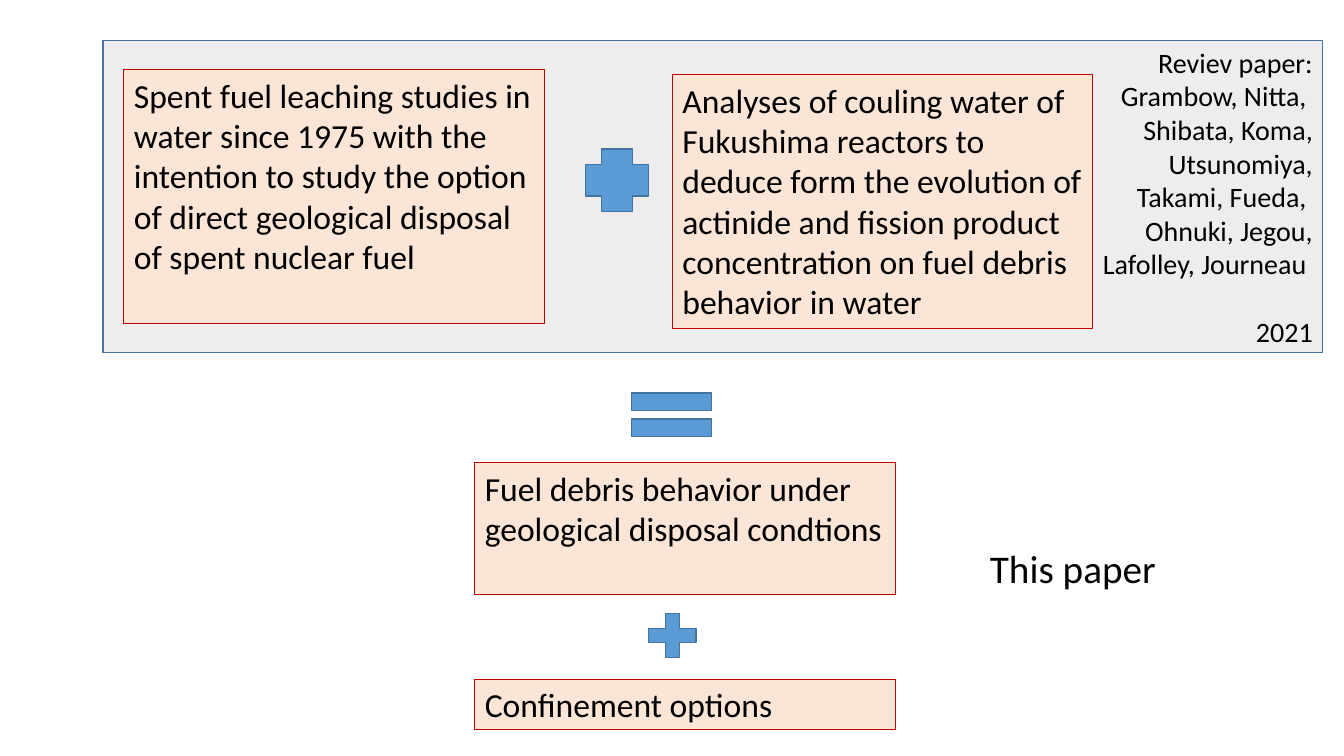
from pptx import Presentation
from pptx.dml.color import RGBColor
from pptx.enum import shapes, text
from pptx import util as u

PX = 9144
FONT = "Calibri"
HUES = {
    "panel": "EDEDED",
    "card": "FBE5D6",
    "red": "C00000",
    "sign": "5B9BD5",
    "edge": "43739E",
    "ink": "000000",
}
KIND = shapes.MSO_SHAPE
CARD_W = 417
PAPER = [
    "Reviev paper:",
    "Grambow, Nitta, ",
    "Shibata, Koma,",
    "Utsunomiya,",
    "Takami, Fueda, ",
    "Ohnuki, Jegou,",
    "Lafolley, Journeau ",
    "2021",
]
CARDS = [
    (123, 69, 252, "Spent fuel leaching studies in water since 1975 with the "
     "intention to study the option of direct geological disposal of spent "
     "nuclear fuel"),
    (667, 74, 252, "Analyses of couling water of Fukushima reactors to deduce "
     "form the evolution of actinide and fission product concentration on "
     "fuel debris behavior in water"),
    (471, 459, 131, "Fuel debris behavior under geological disposal condtions"),
    (471, 674, 50, "Confinement options"),
]
SIGNS = [
    (KIND.CROSS, (581, 148, 62, 62)),
    (KIND.MATH_EQUAL, (612, 375, 108, 73)),
    (KIND.MATH_PLUS, (635, 601, 64, 59)),
]


def hue(name):
    """Return the colour stored under a name."""
    return RGBColor.from_string(HUES[name])


def place(box):
    """Turn px lengths into EMU."""
    return [n * PX for n in box]


def add_form(slide, kind, box, fill, edge, width):
    """Add a flat filled shape with an outline."""
    form = slide.shapes.add_shape(kind, *place(box))
    form.shadow.inherit = False
    form.fill.solid()
    form.fill.fore_color.rgb = hue(fill)
    form.line.color.rgb = hue(edge)
    form.line.width = u.Pt(width)
    return form


def write(form, lines, size, align=text.PP_ALIGN.LEFT,
          anchor=text.MSO_ANCHOR.TOP, wrap=True):
    """Write one paragraph per line and return the last."""
    frame = form.text_frame
    frame.word_wrap = wrap
    frame.vertical_anchor = anchor
    for i, line in enumerate(lines):
        para = frame.add_paragraph() if i else frame.paragraphs[0]
        para.alignment = align
        run = para.add_run()
        run.text = line
        run.font.name = FONT
        run.font.size = u.Pt(size)
        run.font.color.rgb = hue("ink")
    return para


def add_panel(slide):
    """Add the grey panel with the review paper's authors."""
    panel = add_form(slide, KIND.RECTANGLE, (102, 40, 1210, 310),
                     "panel", "edge", 1)
    year = write(panel, PAPER, 20, text.PP_ALIGN.RIGHT, text.MSO_ANCHOR.MIDDLE)
    year.space_before = u.Pt(24)


def add_card(slide, left, top, high, words):
    """Add a red-edged card of text."""
    card = add_form(slide, KIND.RECTANGLE, (left, top, CARD_W, high),
                    "card", "red", 0.75)
    write(card, [words], 24)


def add_label(slide, box, words):
    """Add a free label on one line."""
    label = slide.shapes.add_textbox(*place(box))
    write(label, [words], 28, wrap=False)


def main():
    """Build and save the slide."""
    deck = Presentation()
    deck.slide_width, deck.slide_height = place((1333, 750))
    slide = deck.slides.add_slide(deck.slide_layouts[6])
    add_panel(slide)
    for card in CARDS:
        add_card(slide, *card)
    for kind, box in SIGNS:
        add_form(slide, kind, box, "sign", "edge", 1)
    add_label(slide, (972, 535, 187, 57), "This paper")
    deck.save("out.pptx")


if __name__ == "__main__":
    main()
